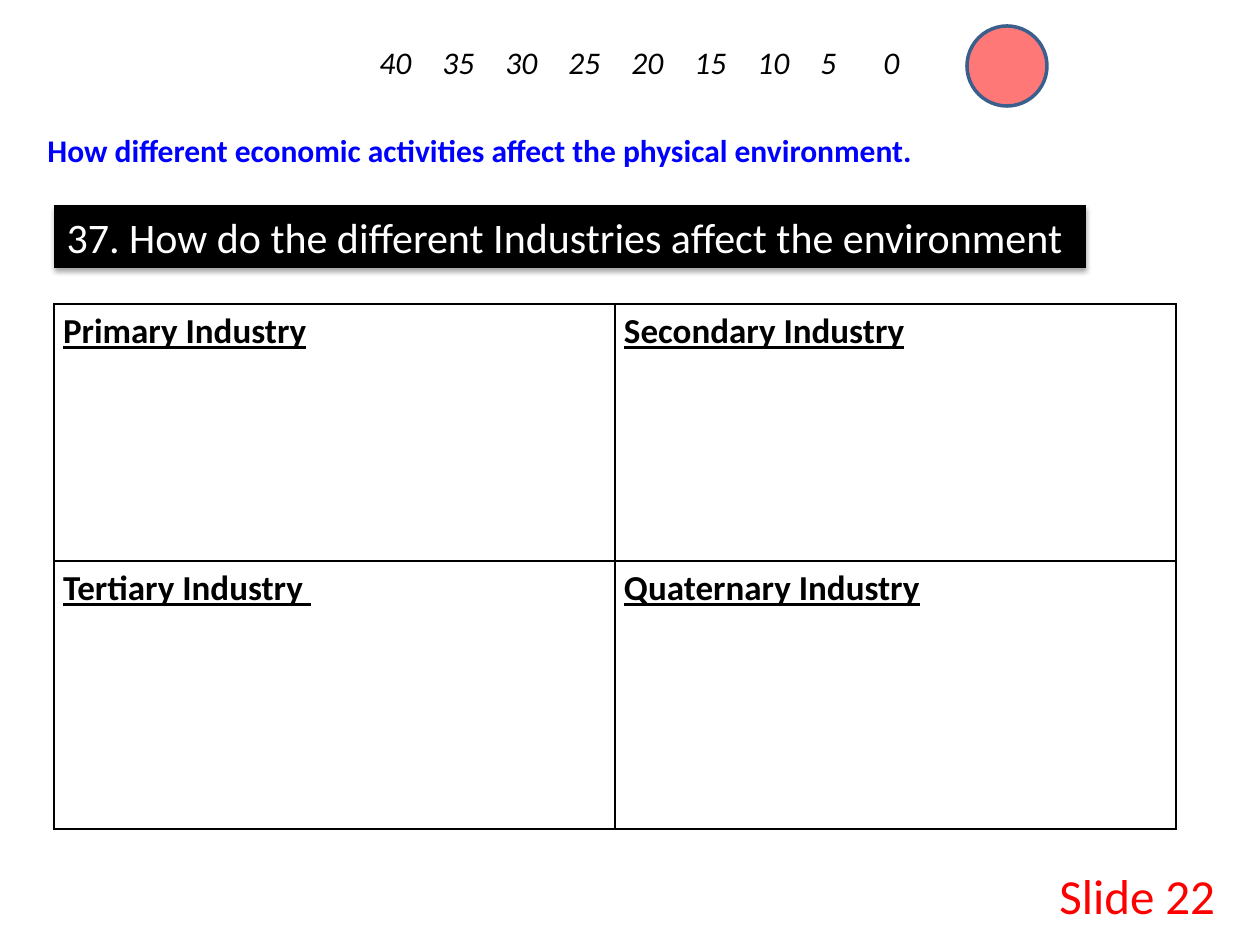
from dataclasses import dataclass
from typing import NamedTuple

from lxml.etree import SubElement
from pptx import Presentation
from pptx.dml.color import RGBColor
from pptx.enum.shapes import MSO_SHAPE
from pptx.enum.text import MSO_ANCHOR, MSO_AUTO_SIZE, PP_ALIGN
from pptx.oxml.ns import qn
from pptx.util import Emu, Pt

PX_PER_INCH = 126


def px(length: int) -> Emu:
    return Emu(round(length * 914400 / PX_PER_INCH))


@dataclass(frozen=True)
class Theme:
    font: str = "Calibri"
    black: str = "000000"
    white: str = "FFFFFF"
    blue: str = "0000FF"
    red: str = "FF0000"
    ring: str = "3A5F8C"
    body: int = 18
    cell: int = 20
    question: int = 24
    page: int = 28


class Box(NamedTuple):
    left: int
    top: int
    width: int
    height: int

    def emu(self) -> list[Emu]:
        return [px(length) for length in self]


@dataclass(frozen=True)
class Style:
    size: int
    color: str
    bold: bool = False
    italic: bool = False
    underline: bool = False


@dataclass(frozen=True)
class Label:
    text: str
    box: Box
    style: Style
    align: PP_ALIGN = PP_ALIGN.LEFT


THEME = Theme()
COUNTDOWN = range(40, -1, -5)
LABELS = [
    Label("Slide 22", Box(1047, 859, 200, 72), Style(THEME.page, THEME.red)),
    Label("\t".join(map(str, COUNTDOWN)), Box(84, 37, 1111, 50),
          Style(THEME.body, THEME.black, italic=True), PP_ALIGN.CENTER),
    Label("How different economic activities affect the physical environment.",
          Box(35, 125, 903, 50), Style(THEME.body, THEME.blue, bold=True)),
]
QUESTION = Label("37. How do the different Industries affect the environment",
                 Box(54, 205, 1032, 63), Style(THEME.question, THEME.white))
MARKER = Box(967, 26, 80, 80)
INDUSTRIES = [
    ["Primary Industry", "Secondary Industry"],
    ["Tertiary Industry ", "Quaternary Industry"],
]
GRID = Box(54, 304, 1122, 525)
ROW_HEIGHTS = [257, 268]
CELL_PADDING = 9


def write(frame, text: str, style: Style, align: PP_ALIGN = PP_ALIGN.LEFT) -> None:
    frame.text = text
    paragraph = frame.paragraphs[0]
    paragraph.alignment = align
    font = paragraph.runs[0].font
    font.name, font.size = THEME.font, Pt(style.size)
    font.bold, font.italic, font.underline = style.bold, style.italic, style.underline
    font.color.rgb = RGBColor.from_string(style.color)


def set_fill(fill, color: str) -> None:
    fill.solid()
    fill.fore_color.rgb = RGBColor.from_string(color)


def add_label(slide, label: Label) -> None:
    frame = slide.shapes.add_textbox(*label.box.emu()).text_frame
    frame.word_wrap = True
    write(frame, label.text, label.style, label.align)


def add_marker(slide, box: Box) -> None:
    """Ring the current countdown number with a see-through disc."""
    marker = slide.shapes.add_shape(MSO_SHAPE.OVAL, *box.emu())
    marker.shadow.inherit = False
    set_fill(marker.fill, THEME.red)
    color = marker.fill._xPr.find(f".//{qn('a:srgbClr')}")
    SubElement(color, qn("a:alpha"), val="53000")
    marker.line.color.rgb = RGBColor.from_string(THEME.ring)
    marker.line.width = Pt(2)


def format_question(title, question: Label) -> None:
    title.left, title.top, title.width, title.height = question.box.emu()
    set_fill(title.fill, THEME.black)
    title.line.fill.background()
    title.shadow.inherit = False
    effects = title._element.spPr.find(qn("a:effectLst"))
    shadow = SubElement(effects, qn("a:outerShdw"), blurRad=str(Pt(3.1)),
                        dist=str(Pt(1.8)), dir="5400000", rotWithShape="0")
    color = SubElement(shadow, qn("a:srgbClr"), val=THEME.black)
    SubElement(color, qn("a:alpha"), val="35000")
    frame = title.text_frame
    frame.auto_size = MSO_AUTO_SIZE.NONE
    frame.word_wrap = True
    frame.vertical_anchor = MSO_ANCHOR.MIDDLE
    write(frame, question.text, question.style, question.align)


def add_borders(cell) -> None:
    properties = cell._tc.get_or_add_tcPr()
    for position, side in enumerate(("a:lnL", "a:lnR", "a:lnT", "a:lnB")):
        line = properties.makeelement(qn(side), {"w": str(Pt(1))})
        properties.insert(position, line)
        fill = SubElement(line, qn("a:solidFill"))
        SubElement(fill, qn("a:srgbClr"), val=THEME.black)


def add_industries(slide) -> None:
    rows, columns = len(INDUSTRIES), len(INDUSTRIES[0])
    table = slide.shapes.add_table(rows, columns, *GRID.emu()).table
    table.first_row = table.horz_banding = False
    heading = Style(THEME.cell, THEME.black, bold=True, underline=True)
    for row, height, names in zip(table.rows, ROW_HEIGHTS, INDUSTRIES):
        row.height = px(height)
        for cell, name in zip(row.cells, names):
            cell.margin_left = cell.margin_right = px(CELL_PADDING)
            cell.margin_top = cell.margin_bottom = 0
            write(cell.text_frame, name, heading)
            cell.text_frame.paragraphs[0].line_spacing = 1.15
            set_fill(cell.fill, THEME.white)
            add_borders(cell)


def main() -> None:
    deck = Presentation()
    deck.slide_width, deck.slide_height = px(1260), px(945)
    slide = deck.slides.add_slide(deck.slide_layouts[5])
    format_question(slide.shapes.title, QUESTION)
    for label in LABELS:
        add_label(slide, label)
    add_marker(slide, MARKER)
    add_industries(slide)
    deck.save("out.pptx")


if __name__ == "__main__":
    main()
